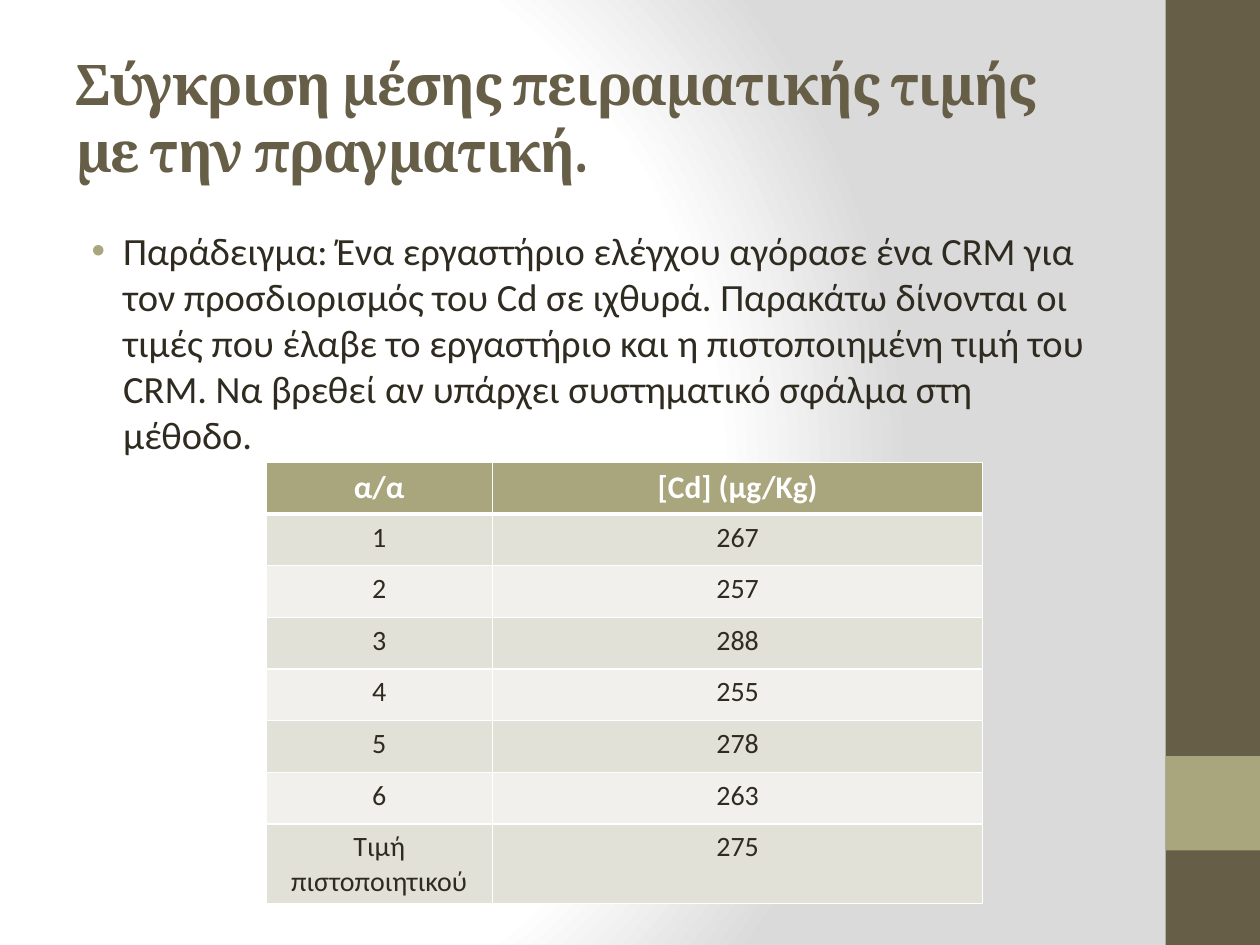
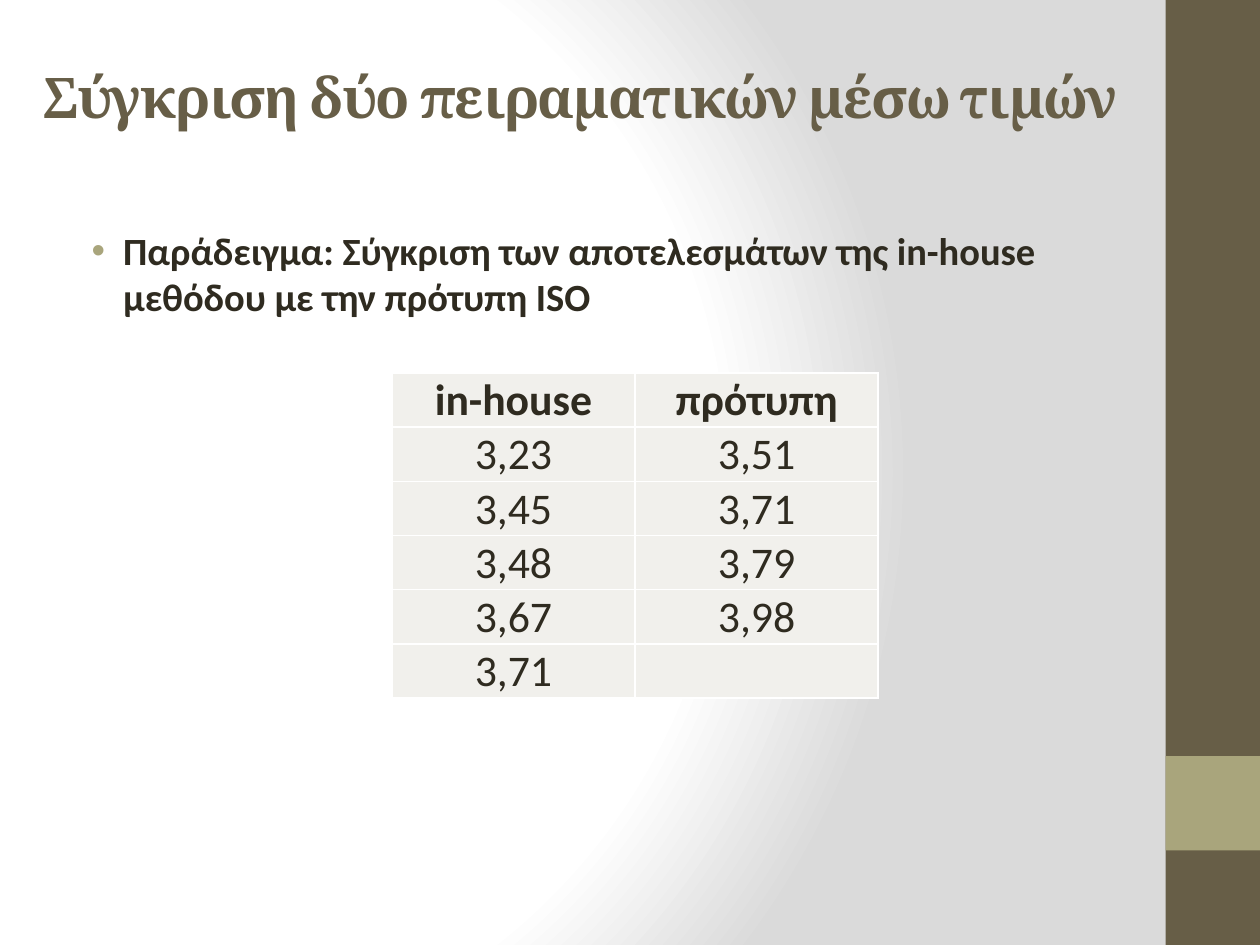
"""Build two slides on comparing mean values in analytical chemistry."""
from dataclasses import dataclass

from pptx import Presentation
from pptx.dml.color import RGBColor as Rgb
from pptx.enum.shapes import MSO_SHAPE as Preset
from pptx.enum.text import MSO_ANCHOR as Anchor, PP_ALIGN as Align
from pptx.oxml import parse_xml
from pptx.oxml.ns import nsdecls, qn
from pptx.util import Inches, Pt

COMPARISONS = [
    {
        "title": "Σύγκριση μέσης πειραματικής τιμής με την πραγματική.",
        "title_at": (0.5, 0.3, 8.33, 1.25),
        "title_align": Align.LEFT,
        "example": "Παράδειγμα: Ένα εργαστήριο ελέγχου αγόρασε ένα CRM για τον "
                   "προσδιορισμός του Cd σε ιχθυρά. Παρακάτω δίνονται οι τιμές που "
                   "έλαβε το εργαστήριο και η πιστοποιημένη τιμή του CRM. Να βρεθεί "
                   "αν υπάρχει συστηματικό σφάλμα στη μέθοδο.",
        "example_bold": False,
        "rows": [
            ("α/α", "[Cd] (μg/Kg)"),
            ("1", "267"),
            ("2", "257"),
            ("3", "288"),
            ("4", "255"),
            ("5", "278"),
            ("6", "263"),
            ("Τιμή πιστοποιητικού", "275"),
        ],
        "table_at": (2.11, 3.67),
        "columns": (1.8, 3.89),
        "row_height": 0.41,
        "banded": True,
    },
    {
        "title": "Σύγκριση δύο πειραματικών μέσω τιμών",
        "title_at": (0.2, 0.13, 8.82, 1.26),
        "title_align": Align.CENTER,
        "example": "Παράδειγμα: Σύγκριση των αποτελεσμάτων της in-house μεθόδου "
                   "με την πρότυπη ISO",
        "example_bold": True,
        "rows": [
            ("in-house", "πρότυπη"),
            ("3,23", "3,51"),
            ("3,45", "3,71"),
            ("3,48", "3,79"),
            ("3,67", "3,98"),
            ("3,71", ""),
        ],
        "table_at": (3.11, 2.96),
        "columns": (1.93, 1.93),
        "row_height": 0.43,
        "banded": False,
    },
]


@dataclass(frozen=True)
class Theme:
    brown: str = "675E47"
    olive: str = "A9A57C"
    ink: str = "2F2B20"
    white: str = "FFFFFF"
    grey: str = "DADADA"
    dark_row: str = "E2E1D7"
    light_row: str = "F1F0EC"
    heading: str = "Cambria"
    body: str = "Calibri"
    title_size: int = 32
    example_size: int = 22
    header_size: int = 18
    value_size: int = 16
    plain_size: int = 25


THEME = Theme()
SIDE_BANDS = [((9.25, 0, 0.75, 7.5), THEME.brown), ((9.25, 6, 0.75, 0.75), THEME.olive)]
EXAMPLE_AT = (0.5, 1.75, 8.33, 5.25)


def inches(lengths):
    return [Inches(length) for length in lengths]


def set_font(para, name, size, color, bold):
    font = para.font
    font.name, font.size, font.bold = name, Pt(size), bold
    font.color.rgb = Rgb.from_string(color)


def set_background(master):
    stops = "".join(
        f'<a:gs pos="{percent * 1000}"><a:srgbClr val="{color}"/></a:gs>'
        for percent, color in ((0, THEME.white), (75, THEME.white), (100, THEME.grey)))
    background = parse_xml(
        f'<p:bg {nsdecls("p", "a")}><p:bgPr><a:gradFill rotWithShape="1">'
        f'<a:gsLst>{stops}</a:gsLst><a:path path="circle">'
        '<a:fillToRect l="20000" t="50000" r="100000" b="50000"/></a:path>'
        '</a:gradFill><a:effectLst/></p:bgPr></p:bg>')
    content = master.element.find(qn("p:cSld"))
    content.replace(content.find(qn("p:bg")), background)


def add_side_bands(page):
    for place, color in SIDE_BANDS:
        band = page.shapes.add_shape(Preset.RECTANGLE, *inches(place))
        band.shadow.inherit = False
        band.fill.solid()
        band.fill.fore_color.rgb = Rgb.from_string(color)
        band.line.fill.background()


def add_text(page, place, text):
    box = page.shapes.add_textbox(*inches(place))
    box.text_frame.word_wrap = True
    para = box.text_frame.paragraphs[0]
    para.text = text
    return box.text_frame, para


def add_title(page, comparison):
    frame, para = add_text(page, comparison["title_at"], comparison["title"])
    frame.vertical_anchor = Anchor.MIDDLE
    para.alignment = comparison["title_align"]
    para.runs[0]._r.get_or_add_rPr().set("spc", "-100")
    set_font(para, THEME.heading, THEME.title_size, THEME.brown, True)


def add_example(page, comparison):
    _, para = add_text(page, EXAMPLE_AT, comparison["example"])
    props = para._p.get_or_add_pPr()
    props.set("marL", str(Inches(0.38)))
    props.set("indent", str(Inches(-0.25)))
    for bullet in (f'<a:buClr {nsdecls("a")}><a:srgbClr val="{THEME.olive}"/></a:buClr>',
                   f'<a:buFont {nsdecls("a")} typeface="Arial"/>',
                   f'<a:buChar {nsdecls("a")} char="•"/>'):
        props.append(parse_xml(bullet))
    set_font(para, THEME.body, THEME.example_size, THEME.ink, comparison["example_bold"])


def set_borders(cell, top, bottom):
    props = cell._tc.get_or_add_tcPr()
    for side, width in (("L", 1), ("R", 1), ("T", top), ("B", bottom)):
        props.append(parse_xml(
            f'<a:ln{side} {nsdecls("a")} w="{Pt(width)}"><a:solidFill>'
            f'<a:srgbClr val="{THEME.white}"/></a:solidFill></a:ln{side}>'))


def cell_style(row, banded):
    """Return the fill, text colour and text size of a row."""
    if not banded:
        return THEME.light_row, THEME.ink, THEME.plain_size
    if row == 0:
        return THEME.olive, THEME.white, THEME.header_size
    return (THEME.dark_row if row % 2 else THEME.light_row), THEME.ink, THEME.value_size


def add_values(page, comparison):
    rows, columns, banded = (comparison[key] for key in ("rows", "columns", "banded"))
    height = comparison["row_height"]
    place = (*comparison["table_at"], sum(columns), height * len(rows))
    table = page.shapes.add_table(len(rows), len(columns), *inches(place)).table
    table.first_row = table.horz_banding = False
    for column, width in zip(table.columns, columns):
        column.width = Inches(width)
    for row, texts in enumerate(rows):
        table.rows[row].height = Inches(height)
        fill, color, size = cell_style(row, banded)
        for column, text in enumerate(texts):
            cell = table.cell(row, column)
            set_borders(cell, 3 if banded and row == 1 else 1, 3 if banded and row == 0 else 1)
            cell.fill.solid()
            cell.fill.fore_color.rgb = Rgb.from_string(fill)
            if not banded:
                cell.vertical_anchor = Anchor.MIDDLE
                cell.margin_left = cell.margin_right = cell.margin_top = Inches(0.01)
                cell.margin_bottom = 0
            para = cell.text_frame.paragraphs[0]
            para.text = text
            para.alignment = Align.CENTER
            set_font(para, THEME.body, size, color, row == 0)


def main():
    deck = Presentation()
    deck.slide_width, deck.slide_height = inches((10, 7.5))
    set_background(deck.slide_master)
    for comparison in COMPARISONS:
        page = deck.slides.add_slide(deck.slide_layouts[6])
        for placeholder in list(page.placeholders):
            placeholder.element.getparent().remove(placeholder.element)
        add_side_bands(page)
        add_title(page, comparison)
        add_example(page, comparison)
        add_values(page, comparison)
    deck.save("out.pptx")


if __name__ == "__main__":
    main()
